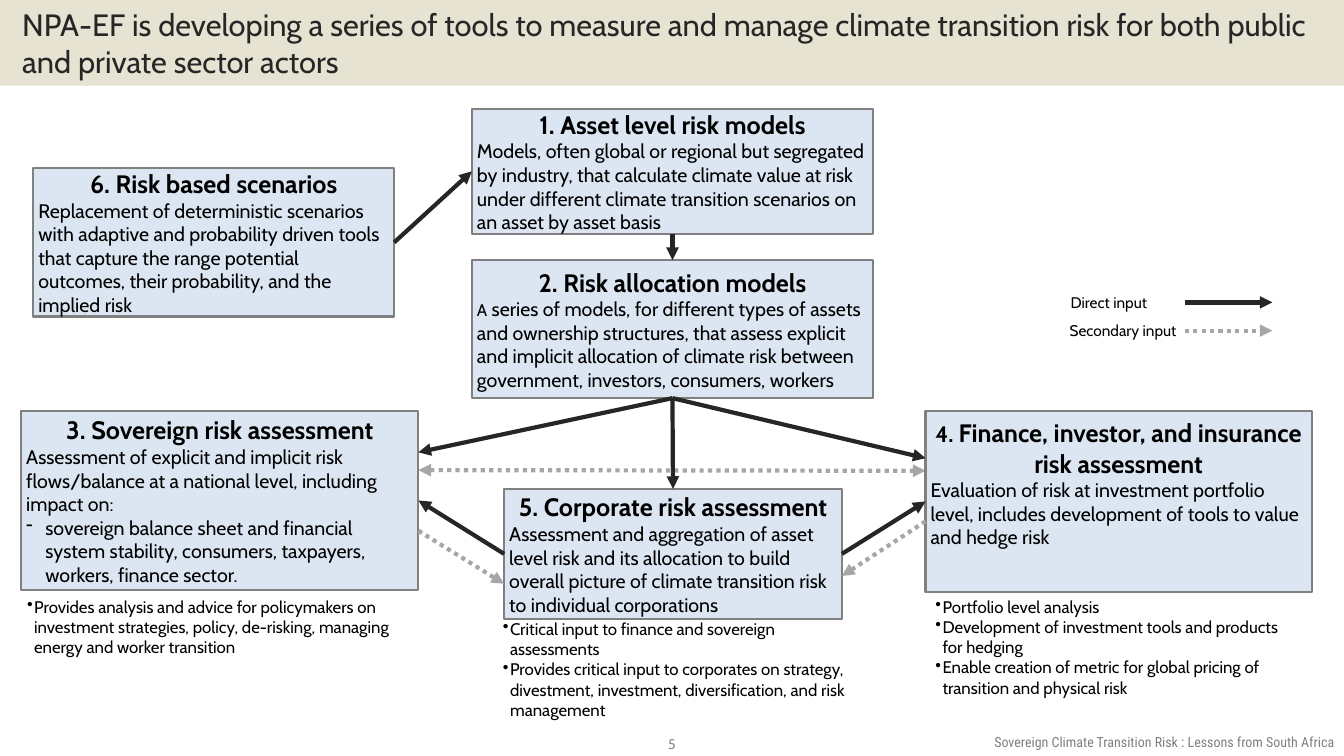
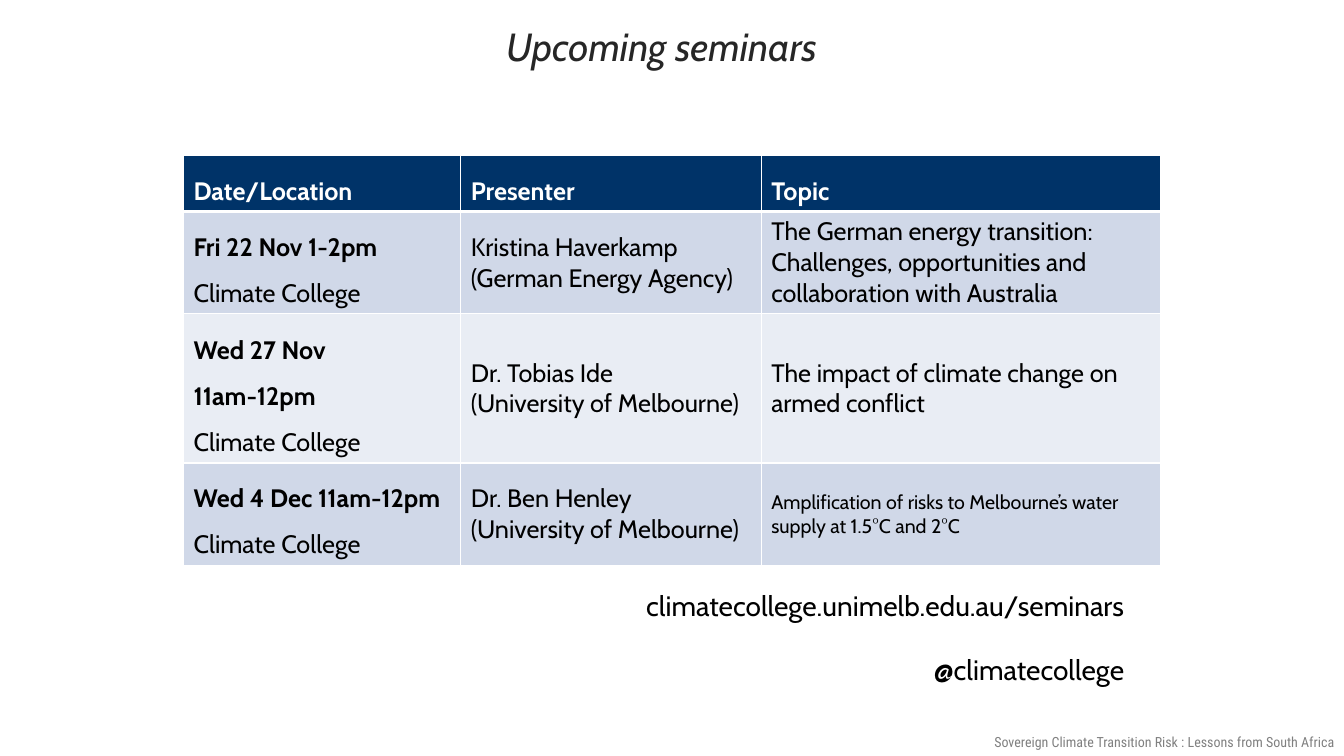
"""Build two slides on climate transition risk: a flow of tools and a seminar table."""
from pptx import Presentation
from pptx.dml.color import RGBColor
from pptx.enum.dml import MSO_LINE
from pptx.enum.shapes import MSO_CONNECTOR as CONN, MSO_SHAPE as SHAPE
from pptx.enum.text import MSO_ANCHOR as ANCHOR, PP_ALIGN as ALIGN
from pptx.oxml.ns import qn
from pptx.util import Inches, Pt
from lxml.etree import SubElement

W, H = 13.33, 7.5
INK, BLACK, WHITE, GREY, SOFT = "262626", "000000", "FFFFFF", "808080", "A6A6A6"
BAND, PALE, NAVY = "E6E3D2", "DCE6F2", "003368"
ROW_FILLS = ["D0D8E8", "E9EDF4"]
FOOTER = "Sovereign Climate Transition Risk : Lessons from South Africa"

TOOLS_TITLE = ("NPA-EF is developing a series of tools to measure and manage climate "
               "transition risk for both public and private sector actors")
TOOLS = {
    "asset": ((4.68, 1.08, 3.98, 1.24), "1. Asset level risk models",
              "Models, often global or regional but segregated by industry, that calculate "
              "climate value at risk under different climate transition scenarios on an "
              "asset by asset basis"),
    "allocation": ((4.68, 2.58, 3.98, 1.37), "2. Risk allocation models",
                   [("A", 12), (" series of models, for different types of assets and "
                                "ownership structures, that assess explicit and implicit "
                                "allocation of climate risk between government, investors, "
                                "consumers, workers", 14)]),
    "corporate": ((5, 4.85, 3.35, 1.29), "5. Corporate risk assessment",
                  "Assessment and aggregation of asset level risk and its allocation to "
                  "build overall picture of climate transition risk to individual "
                  "corporations"),
    "finance": ((9.18, 4.08, 3.83, 1.79),
                [("4. ", 16), ("Finance, investor, and insurance risk assessment", 18)],
                "Evaluation of risk at investment portfolio level, includes development "
                "of tools to value and hedge risk"),
    "sovereign": ((0.21, 4.08, 3.94, 1.77), "3. Sovereign risk assessment",
                  "Assessment of explicit and implicit risk flows/balance at a national "
                  "level, including impact on:"),
    "scenarios": ((0.33, 1.67, 3.58, 1.47), "6. Risk based scenarios",
                  "Replacement of deterministic scenarios with adaptive and probability "
                  "driven tools that capture the range potential outcomes, their "
                  "probability, and the implied risk"),
}
SUB_POINTS = {"sovereign": "sovereign balance sheet and financial system stability, "
                           "consumers, taxpayers, workers, finance sector."}
BOTTOM_INSETS = {"finance": 0.41}
USES = [
    ((0.17, 5.87, 3.91, 0.71),
     ["Provides analysis and advice for policymakers on investment strategies, policy, "
      "de-risking, managing energy and worker transition"]),
    ((4.89, 6.09, 3.62, 1.11),
     ["Critical input to finance and sovereign assessments",
      "Provides critical input to corporates on strategy, divestment, investment, "
      "diversification, and risk management"]),
    ((9.18, 5.87, 3.76, 1.11),
     ["Portfolio level analysis",
      "Development of investment tools and products for hedging",
      "Enable creation of metric for global pricing of transition and physical risk"]),
]
DIRECT = [
    ("scenarios", (1, 0.5), "asset", (0, 0.5)),
    ("asset", (0.5, 1), "allocation", (0.5, 0)),
    ("allocation", (0.5, 1), "sovereign", (1, 0.23)),
    ("allocation", (0.5, 1), "finance", (0, 0.26)),
    ("allocation", (0.5, 1), "corporate", (0.5, 0)),
    ("corporate", (0, 0.5), "sovereign", (1, 0.5)),
    ("corporate", (1, 0.5), "finance", (0, 0.5)),
]
SECONDARY = [
    ("sovereign", (1, 0.67), "corporate", (0, 0.73)),
    ("finance", (0, 0.61), "corporate", (1, 0.67)),
]
MUTUAL = [("sovereign", (1, 0.33), "finance", (0, 0.33))]
LEGEND = [("Direct input", 10.52, 3, False), ("Secondary input", 10.51, 3.28, True)]

SEMINARS_TITLE = "Upcoming seminars"
COLUMNS = {"Date/Location": 2.75, "Presenter": 2.98, "Topic": 3.96}
ROW_HEIGHTS = [0.55, 1.01, 1.48, 1.01]
PLACE = "Climate College"
SEMINARS = [
    ("Fri 22 Nov 1-2pm", ["Kristina Haverkamp", "(German Energy Agency)"],
     "The German energy transition: Challenges, opportunities and collaboration with "
     "Australia", 18),
    ("Wed 27 Nov 11am-12pm", ["Dr. Tobias Ide", "(University of Melbourne)"],
     "The impact of climate change on armed conflict", 18),
    ("Wed 4 Dec 11am-12pm", ["Dr. Ben Henley", "(University of Melbourne)"],
     "Amplification of risks to Melbourne’s water supply at 1.5°C and 2°C", 14),
]
CONTACTS = [("climatecollege.unimelb.edu.au/seminars", (5.67, 5.79, 5.58, 0.44)),
            ("@climatecollege", (6.83, 6.42, 4.42, 0.44))]


def rgb(value):
    return RGBColor.from_string(value)


def inches(values):
    return [Inches(v) for v in values]


def para(text, size, color=BLACK, bullet=None, indent=0.0, margin=0.0,
         align=ALIGN.LEFT, spacing=None, font="Cabin", **font_format):
    runs = [(text, size)] if isinstance(text, str) else text
    return {"runs": runs, "color": color, "bullet": bullet, "indent": indent,
            "margin": margin, "format": {"alignment": align, "line_spacing": spacing},
            "font": {"name": font, **font_format}}


def write(tf, paras, anchor=ANCHOR.TOP, insets=(0.1, 0.05, 0.1, 0.05)):
    tf.word_wrap = True
    tf.vertical_anchor = anchor
    for side, value in zip(("left", "top", "right", "bottom"), insets):
        setattr(tf, f"margin_{side}", Inches(value))
    for i, spec in enumerate(paras):
        p = tf.add_paragraph() if i else tf.paragraphs[0]
        pPr = p._p.get_or_add_pPr()
        pPr.set("marL", str(Inches(spec["margin"] + spec["indent"])))
        pPr.set("indent", str(-Inches(spec["indent"])))
        if spec["bullet"]:
            SubElement(pPr, qn("a:buChar")).set("char", spec["bullet"])
        for name, value in spec["format"].items():
            setattr(p, name, value)
        for text, size in spec["runs"]:
            r = p.add_run()
            r.text = text
            for name, value in {"size": Pt(size), **spec["font"]}.items():
                setattr(r.font, name, value)
            r.font.color.rgb = rgb(spec["color"])


def add_text(s, at, paras, anchor=ANCHOR.TOP):
    sp = s.shapes.add_textbox(*inches(at))
    write(sp.text_frame, paras, anchor)
    return sp


def set_title(s, at, paragraph, fill=None):
    sp = s.shapes.title
    sp.left, sp.top, sp.width, sp.height = inches(at)
    if fill:
        sp.fill.solid()
        sp.fill.fore_color.rgb = rgb(fill)
    write(sp.text_frame, [paragraph], ANCHOR.MIDDLE)


def add_tool(s, key):
    at, heading, body = TOOLS[key]
    sp = s.shapes.add_shape(SHAPE.RECTANGLE, *inches(at))
    sp.shadow.inherit = False
    sp.fill.solid()
    sp.fill.fore_color.rgb = rgb(PALE)
    sp.line.color.rgb = rgb(GREY)
    sp.line.width = Pt(1.5)
    paras = [para(heading, 18, align=ALIGN.CENTER, bold=True), para(body, 14)]
    if key in SUB_POINTS:
        paras.append(para(SUB_POINTS[key], 14, bullet="-", indent=0.19))
    write(sp.text_frame, paras, ANCHOR.MIDDLE,
          (0.05, 0.05, 0.05, BOTTOM_INSETS.get(key, 0.05)))


def add_arrow(s, start, end, dotted=False, both=False):
    cx = s.shapes.add_connector(CONN.STRAIGHT, *inches((*start, *end)))
    cx.line.color.rgb = rgb(SOFT if dotted else INK)
    cx.line.width = Pt(3)
    if dotted:
        cx.line.dash_style = MSO_LINE.ROUND_DOT
    ln = cx.line._get_or_add_ln()
    for tag in ("a:headEnd", "a:tailEnd") if both else ("a:tailEnd",):
        SubElement(ln, qn(tag)).set("type", "triangle")
    SubElement(cx._element.spPr, qn("a:effectLst"))


def point(key, share):
    x, y, w, h = TOOLS[key][0]
    return x + w * share[0], y + h * share[1]


def add_links(s, links, **style):
    for source, out_share, target, in_share in links:
        add_arrow(s, point(source, out_share), point(target, in_share), **style)


def style_cell(cell, paras, fill, bottom=1):
    cell.fill.solid()
    cell.fill.fore_color.rgb = rgb(fill)
    write(cell.text_frame, paras)
    cell.vertical_anchor = ANCHOR.MIDDLE
    tcPr = cell._tc.get_or_add_tcPr()
    for i, (tag, width) in enumerate({"lnL": 1, "lnR": 1, "lnT": 1, "lnB": bottom}.items()):
        ln = SubElement(tcPr, qn(f"a:{tag}"), w=str(Pt(width)))
        SubElement(SubElement(ln, qn("a:solidFill")), qn("a:srgbClr")).set("val", WHITE)
        tcPr.insert(i, ln)


def add_master_footer(s):
    box = add_text(s, (W * 0.6, 7.23, W * 0.4, 0.27),
                   [para(FOOTER, 10, GREY, align=ALIGN.RIGHT, font="Roboto Condensed")])
    s.slide_layout.slide_master.shapes.element.append(box.element)


def build_tools(s):
    set_title(s, (0, 0, W, 0.85), para(TOOLS_TITLE, 22, INK, margin=0.12), BAND)
    add_text(s, (5.11, 7.27, 3.11, 0.23),
             [para("5", 10, "8C8C8C", align=ALIGN.CENTER)], ANCHOR.MIDDLE)
    add_links(s, MUTUAL, dotted=True, both=True)
    for key in TOOLS:
        add_tool(s, key)
    for at, points in USES:
        add_text(s, at, [para(t, 12, bullet="•", indent=0.07) for t in points])
    add_links(s, DIRECT)
    add_links(s, SECONDARY, dotted=True)
    for label, x, y, dotted in LEGEND:
        add_text(s, (x, y - 0.14, 1.4, 0.29), [para(label, 11)])
        add_arrow(s, (11.75, y), (12.62, y), dotted)


def build_seminars(s):
    set_title(s, (4.92, 0.08, 6.33, 0.75), para(SEMINARS_TITLE, 28, INK, italic=True))
    table = s.shapes.add_table(len(SEMINARS) + 1, len(COLUMNS), *inches(
        (1.82, 1.54, sum(COLUMNS.values()), sum(ROW_HEIGHTS)))).table
    for row, height in zip(table.rows, ROW_HEIGHTS):
        row.height = Inches(height)
    for c, (name, width) in enumerate(COLUMNS.items()):
        table.columns[c].width = Inches(width)
        style_cell(table.cell(0, c), [para(name, 18, WHITE, spacing=1.5, bold=True)],
                   NAVY, bottom=3)
    for r, (date, presenter, topic, size) in enumerate(SEMINARS):
        cells = [[para(date, 18, spacing=1.5, bold=True), para(PLACE, 18, spacing=1.5)],
                 [para(line, 18) for line in presenter], [para(topic, size)]]
        for c, paras in enumerate(cells):
            style_cell(table.cell(r + 1, c), paras, ROW_FILLS[r % 2],)
    for text, at in CONTACTS:
        add_text(s, at, [para(text, 20, align=ALIGN.RIGHT)])


def main():
    prs = Presentation()
    prs.slide_width, prs.slide_height = inches((W, H))
    for i, build in enumerate((build_tools, build_seminars)):
        s = prs.slides.add_slide(prs.slide_layouts[5])
        if i == 0:
            add_master_footer(s)
        build(s)
    prs.save("out.pptx")


if __name__ == "__main__":
    main()
